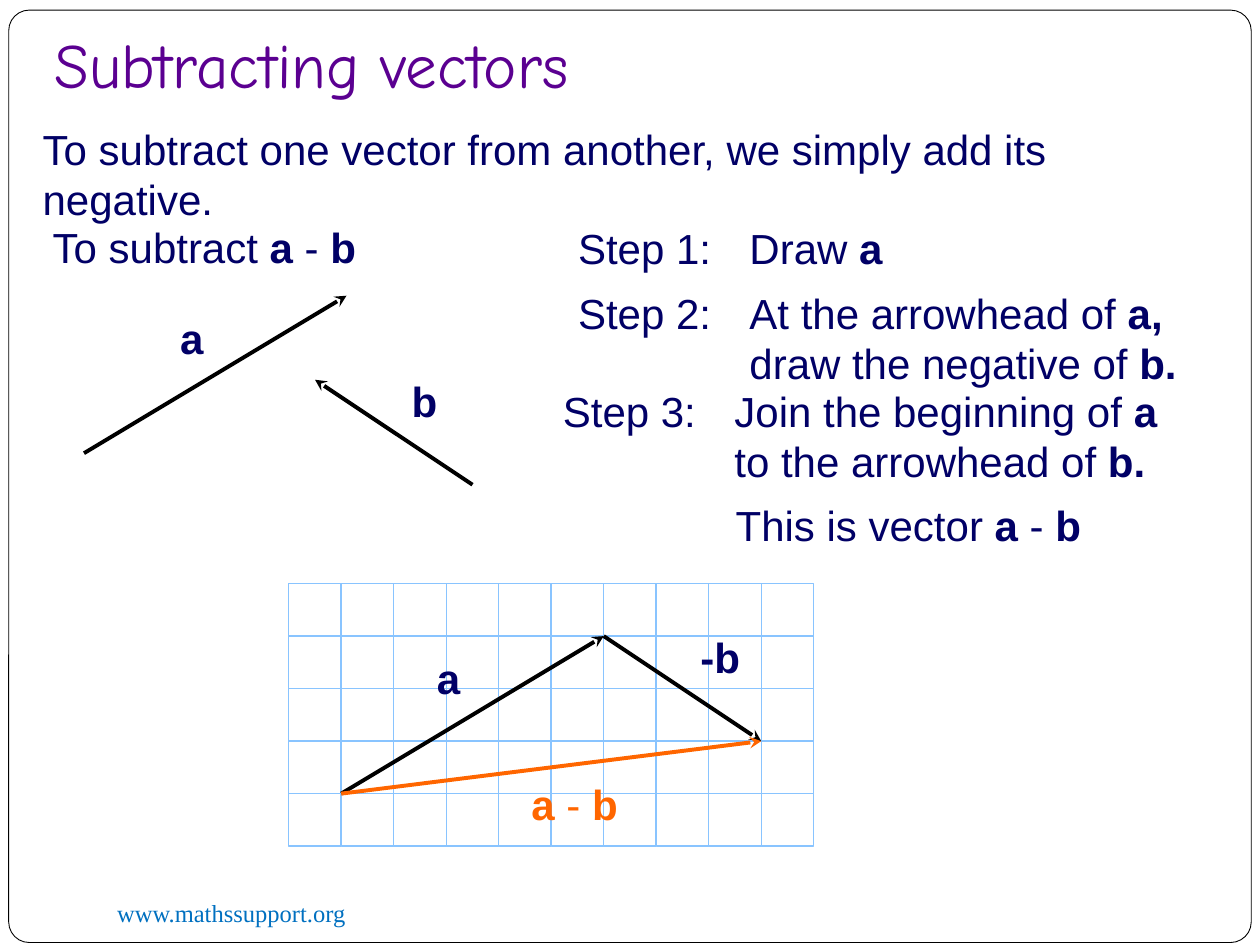
import pptx
import pptx.util
import pptx.dml.color
import pptx.enum.shapes
import pptx.enum.text
import pptx.oxml.ns
import pptx.oxml.xmlchemy

Pt = pptx.util.Pt
TEXT = pptx.enum.text
SHAPE = pptx.enum.shapes.MSO_SHAPE


class Theme:
    ink, title, link = "010066", "5B0091", "0070C0"
    white, black, grid, sum = "FFFFFF", "000000", "89C4FF", "FF6600"
    body, head, foot = 24, 36, 14
    font, fancy, serif = "Arial", "Comic Neue", "Times New Roman"


# Asterisks switch bold on and off.
TITLE = ("Subtracting vectors", (23.8, 16.6, 612, 48.2))
FOOTER = ("www.mathssupport.org", (59.8, 509.8, 234, 24.5))
FRAME = (5, 5.8, 710, 532.8)

# text, left, top, width, height
PROSE = [
    ("To subtract one vector from another, we simply add its negative.",
     17.3, 67, 685.4, 65.5),
    ("To subtract *a* - *b*", 23, 123.1, 219.6, 36),
    ("Step 1:", 323.3, 123.8, 108, 36),
    ("Draw *a*", 421.2, 123.8, 108, 36),
    ("Step 2:", 323.3, 160.6, 108, 36),
    ("At the arrowhead of *a, *draw the negative of* b.*",
     421.2, 160.6, 259.2, 65.5),
    ("Step 3:", 314.6, 216.7, 108, 36),
    ("Join the beginning of *a *to the arrowhead of* b.*",
     412.6, 216.7, 259.2, 65.5),
]
LABELS = [
    ("This is vector *a *-* b*", 413.3, 282.2, 219.6, 36, Theme.ink),
    ("*a*", 95.8, 175, 28.1, 36, Theme.ink),
    ("*b*", 228.2, 211, 28.8, 36, Theme.ink),
    ("*a*", 242.6, 369.4, 28.1, 36, Theme.ink),
    ("*-b*", 393.1, 357.1, 37.4, 36, Theme.ink),
    ("*a *-* b*", 296.6, 441.4, 64.1, 36, Theme.sum),
]

CELL, COLS, ROWS = 30, 10, 5
GRID = (165, 333.5)
# start point in points, then steps in cells
FREE = [((48, 259), (5, -3)), ((270, 277), (-3, -2))]
# start and end in grid cells
PLOT = [((1, 4), (6, 1), Theme.black),
        ((6, 1), (9, 3), Theme.black),
        ((1, 4), (9, 3), Theme.sum)]


def rgb(code):
    return pptx.dml.color.RGBColor.from_string(code)


def write(frame, text, size, font, color):
    para = frame.paragraphs[0]
    para.alignment = TEXT.PP_ALIGN.LEFT
    for i, part in enumerate(text.split("*")):
        if part:
            run = para.add_run()
            run.text = part
            run.font.bold = i % 2 == 1
    para.font.size = Pt(size)
    para.font.name = font
    para.font.color.rgb = rgb(color)


def label(slide, text, box, color=Theme.ink, wrap=True,
          size=Theme.body, font=Theme.font):
    frame = slide.shapes.add_textbox(*map(Pt, box)).text_frame
    frame.word_wrap = wrap
    frame.auto_size = TEXT.MSO_AUTO_SIZE.SHAPE_TO_FIT_TEXT
    write(frame, text, size, font, color)


def block(shapes, kind, box, color, width):
    shape = shapes.add_shape(kind, *map(Pt, box))
    shape.shadow.inherit = False
    shape.fill.solid()
    shape.fill.fore_color.rgb = rgb(Theme.white)
    shape.line.color.rgb = rgb(color)
    shape.line.width = Pt(width)
    return shape


def arrow(slide, start, end, color=Theme.black):
    line = slide.shapes.add_connector(
        pptx.enum.shapes.MSO_CONNECTOR.STRAIGHT, *map(Pt, (*start, *end)))
    line.line.color.rgb = rgb(color)
    line.line.width = Pt(2.25)
    make, name = pptx.oxml.xmlchemy.OxmlElement, pptx.oxml.ns.qn
    tail = make("a:tailEnd")
    tail.set("type", "stealth")
    props = line._element.spPr
    props.find(name("a:ln")).append(tail)
    props.append(make("a:effectLst"))


def node(col, row):
    """Position of a grid crossing in points."""
    return GRID[0] + col * CELL, GRID[1] + row * CELL


def set_title(slide):
    text, box = TITLE
    title = slide.shapes.title
    title.left, title.top, title.width, title.height = map(Pt, box)
    frame = title.text_frame
    frame.auto_size = TEXT.MSO_AUTO_SIZE.NONE
    frame.vertical_anchor = TEXT.MSO_ANCHOR.BOTTOM
    frame.margin_top, frame.margin_bottom = Pt(3.6), Pt(7.2)
    write(frame, text, Theme.head, Theme.fancy, Theme.title)
    # Bring the title in front of the page frame.
    slide.shapes._spTree.append(title._element)


def main():
    deck = pptx.Presentation()
    deck.slide_width, deck.slide_height = Pt(720), Pt(540)
    slide = deck.slides.add_slide(deck.slide_layouts[5])

    frame = block(slide.shapes, SHAPE.ROUNDED_RECTANGLE, FRAME, Theme.black, 0.5)
    frame.adjustments[0] = 0.022
    label(slide, *FOOTER, color=Theme.link, size=Theme.foot, font=Theme.serif)
    set_title(slide)

    for text, *box in PROSE:
        label(slide, text, box)

    grid = slide.shapes.add_group_shape()
    for row in range(ROWS):
        for col in range(COLS):
            block(grid.shapes, SHAPE.RECTANGLE,
                  (*node(col, row), CELL, CELL), Theme.grid, 0.75)

    for (x, y), (right, down) in FREE:
        arrow(slide, (x, y), (x + right * CELL, y + down * CELL))
    for start, end, color in PLOT:
        arrow(slide, node(*start), node(*end), color)
    for text, *box, color in LABELS:
        label(slide, text, box, color, wrap=False)

    deck.save("out.pptx")


if __name__ == "__main__":
    main()
